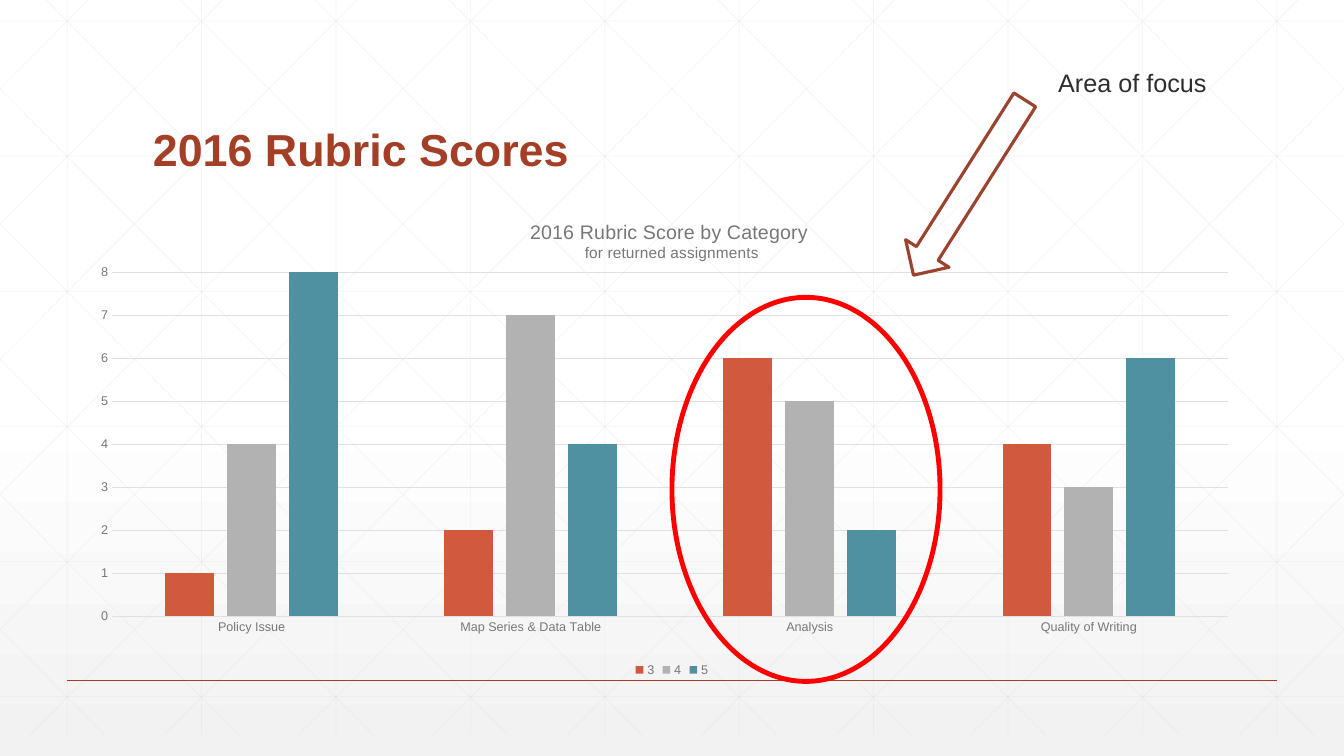
from dataclasses import dataclass

from lxml import etree
from pptx import Presentation
from pptx import util as u
from pptx.chart.data import CategoryChartData
from pptx.dml.color import RGBColor
from pptx.enum import chart as charts
from pptx.enum import shapes, text
from pptx.oxml import parse_xml
from pptx.oxml.ns import nsdecls, qn

Pt = u.Pt


@dataclass(frozen=True)
class Theme:
    font: str = "Arial"
    accent: str = "A43F27"
    arrow: str = "9B432E"
    highlight: str = "FF0000"
    ink: str = "2D2E2D"
    muted: str = "767876"
    grid: str = "DFE0DF"
    pattern: str = "D9D9D9"
    paper: str = "FFFFFF"
    paper_end: str = "F2F2F2"
    title_size: float = 32
    callout_size: float = 18
    chart_title_size: float = 14
    chart_subtitle_size: float = 11
    chart_size: float = 10
    axis_size: float = 9


@dataclass(frozen=True)
class Box:
    left: float
    top: float
    width: float
    height: float

    def points(self) -> tuple:
        return Pt(self.left), Pt(self.top), Pt(self.width), Pt(self.height)


@dataclass(frozen=True)
class Segment:
    x1: float
    y1: float
    x2: float
    y2: float


@dataclass(frozen=True)
class Score:
    name: str
    counts: tuple
    color: str


@dataclass(frozen=True)
class Marker:
    preset: shapes.MSO_SHAPE
    box: Box
    color: str
    weight: float
    rotation: float = 0


THEME = Theme()
WIDTH, HEIGHT = 960, 540
STEP, ROW_STEP = 96, 96.5
PATTERN_TOP, PATTERN_BOTTOM = -15, 525
SLOPE = 0.994  # horizontal run of a diagonal per point of height

CATEGORIES = ("Policy Issue", "Map Series & Data Table", "Analysis", "Quality of Writing")
SCORES = (
    Score("3", (1, 2, 6, 4), "D15A3E"),
    Score("4", (4, 7, 5, 3), "B2B2B2"),
    Score("5", (8, 4, 2, 6), "4F91A1"),
)
MARKERS = (
    Marker(shapes.MSO_SHAPE.OVAL, Box(480, 212.4, 191.5, 274.3), THEME.highlight, 3.5),
    Marker(shapes.MSO_SHAPE.DOWN_ARROW, Box(673.9, 59.8, 36.7, 148.3), THEME.arrow, 2.25, 32.4),
)


def rgb(color: str) -> RGBColor:
    return RGBColor.from_string(color)


def format_font(font, size: float, color: str, bold: bool = False) -> None:
    font.name, font.size, font.bold = THEME.font, Pt(size), bold
    font.color.rgb = rgb(color)


def write_text(paragraph, content: str, *, size: float, color: str, bold: bool = False,
               align=None, spacing=None) -> None:
    run = paragraph.add_run()
    run.text = content
    format_font(run.font, size, color, bold)
    if align is not None:
        paragraph.alignment = align
    if spacing is not None:
        paragraph.line_spacing = spacing


def draw_line(container, segment: Segment, color: str, weight: float, opacity: int = 100) -> None:
    connector = container.add_connector(
        shapes.MSO_CONNECTOR.STRAIGHT,
        Pt(segment.x1), Pt(segment.y1), Pt(segment.x2), Pt(segment.y2))
    connector.line.color.rgb = rgb(color)
    connector.line.width = Pt(weight)
    properties = connector._element.spPr
    if opacity < 100:
        alpha = etree.SubElement(next(properties.iter(qn("a:srgbClr"))), qn("a:alpha"))
        alpha.set("val", str(opacity * 1000))
    etree.SubElement(properties, qn("a:effectLst"))


def pattern_segments() -> list:
    """Columns, rows and mirrored diagonals, cut at the slide edges."""
    segments = [Segment(x, 0, x, PATTERN_BOTTOM) for x in range(48, WIDTH, STEP)]
    rows = [15 + ROW_STEP * index for index in range(6)]
    segments += [Segment(0, y, WIDTH, y) for y in rows]
    for index in range(-5, 10):
        start = 18 + STEP * index
        y1 = max(0, PATTERN_TOP - start / SLOPE)
        y2 = min(PATTERN_BOTTOM, PATTERN_TOP + (WIDTH - start) / SLOPE)
        x1, x2 = (start + SLOPE * (y - PATTERN_TOP) for y in (y1, y2))
        segments += [Segment(x1, y1, x2, y2), Segment(WIDTH - x1, y1, WIDTH - x2, y2)]
    return segments


def draw_background(slide) -> None:
    fill = slide.background.fill
    fill.gradient()
    fill.gradient_angle = 270
    for stop, position, color in zip(fill.gradient_stops, (0.53, 1),
                                     (THEME.paper, THEME.paper_end)):
        stop.position, stop.color.rgb = position, rgb(color)
    group = slide.shapes.add_group_shape()
    for segment in pattern_segments():
        draw_line(group.shapes, segment, THEME.pattern, 0.5, opacity=25)
    slide.shapes.title._element.addprevious(group._element)
    draw_line(slide.shapes, Segment(48, 486, 912, 486), THEME.accent, 1)


def draw_title(slide) -> None:
    title = slide.shapes.title
    title.left, title.top, title.width, title.height = Box(102, 39.6, 756, 90).points()
    frame = title.text_frame
    frame.auto_size = text.MSO_AUTO_SIZE.NONE
    frame.vertical_anchor = text.MSO_ANCHOR.BOTTOM
    write_text(frame.paragraphs[0], "2016 Rubric Scores", size=THEME.title_size,
               color=THEME.accent, bold=True, align=text.PP_ALIGN.LEFT, spacing=0.9)


def format_axis(axis, line) -> None:
    axis.major_tick_mark = axis.minor_tick_mark = charts.XL_TICK_MARK.NONE
    format_font(axis.tick_labels.font, THEME.axis_size, THEME.muted)
    line.color.rgb = rgb(THEME.grid)
    line.width = Pt(0.75)


def draw_chart(slide) -> None:
    data = CategoryChartData(number_format="General")
    data.categories = CATEGORIES
    for score in SCORES:
        data.add_series(score.name, score.counts)
    chart = slide.shapes.add_chart(charts.XL_CHART_TYPE.COLUMN_CLUSTERED,
                                   *Box(66, 144, 828, 342.7).points(), data).chart
    format_font(chart.font, THEME.chart_size, THEME.ink)

    # Title
    frame = chart.chart_title.text_frame
    write_text(frame.paragraphs[0], "2016 Rubric Score by Category ",
               size=THEME.chart_title_size, color=THEME.muted)
    write_text(frame.add_paragraph(), "for returned assignments",
               size=THEME.chart_subtitle_size, color=THEME.muted)
    chart.chart_title.include_in_layout = False

    # Axes and legend
    values = chart.value_axis
    values.minimum_scale, values.maximum_scale, values.major_unit = 0, 8, 1
    format_axis(values, values.major_gridlines.format.line)
    values.format.line.fill.background()
    format_axis(chart.category_axis, chart.category_axis.format.line)
    chart.has_legend = True
    chart.legend.position = charts.XL_LEGEND_POSITION.BOTTOM
    chart.legend.include_in_layout = False
    format_font(chart.legend.font, THEME.axis_size, THEME.muted)

    # Columns and plot area
    plot = chart.plots[0]
    plot.gap_width, plot.overlap, plot.vary_by_categories = 219, -27, False
    for series, score in zip(plot.series, SCORES):
        series.format.fill.solid()
        series.format.fill.fore_color.rgb = rgb(score.color)
    area = chart._chartSpace.chart.plotArea
    for layout in area.findall(qn("c:layout")):
        area.remove(layout)
    settings = {"layoutTarget": "inner", "xMode": "edge", "yMode": "edge",
                "x": 0.017, "y": 0.147, "w": 0.963, "h": 0.718}
    content = "".join(f'<c:{name} val="{value}"/>' for name, value in settings.items())
    area.insert(0, parse_xml(
        f'<c:layout {nsdecls("c")}><c:manualLayout>{content}</c:manualLayout></c:layout>'))


def draw_callout(slide) -> None:
    for marker in MARKERS:
        shape = slide.shapes.add_shape(marker.preset, *marker.box.points())
        shape.shadow.inherit = False
        shape.fill.background()
        shape.line.color.rgb = rgb(marker.color)
        shape.line.width = Pt(marker.weight)
        shape.rotation = marker.rotation
    frame = slide.shapes.add_textbox(*Box(723.6, 13, 170.6, 92.2).points()).text_frame
    frame.word_wrap = True
    frame.vertical_anchor = text.MSO_ANCHOR.MIDDLE
    write_text(frame.paragraphs[0], "Area of focus", size=THEME.callout_size,
               color=THEME.ink, align=text.PP_ALIGN.CENTER)


def main() -> None:
    presentation = Presentation()
    presentation.slide_width, presentation.slide_height = Pt(WIDTH), Pt(HEIGHT)
    slide = presentation.slides.add_slide(presentation.slide_layouts.get_by_name("Title Only"))
    draw_background(slide)
    draw_title(slide)
    draw_chart(slide)
    draw_callout(slide)
    presentation.save("out.pptx")


if __name__ == "__main__":
    main()
